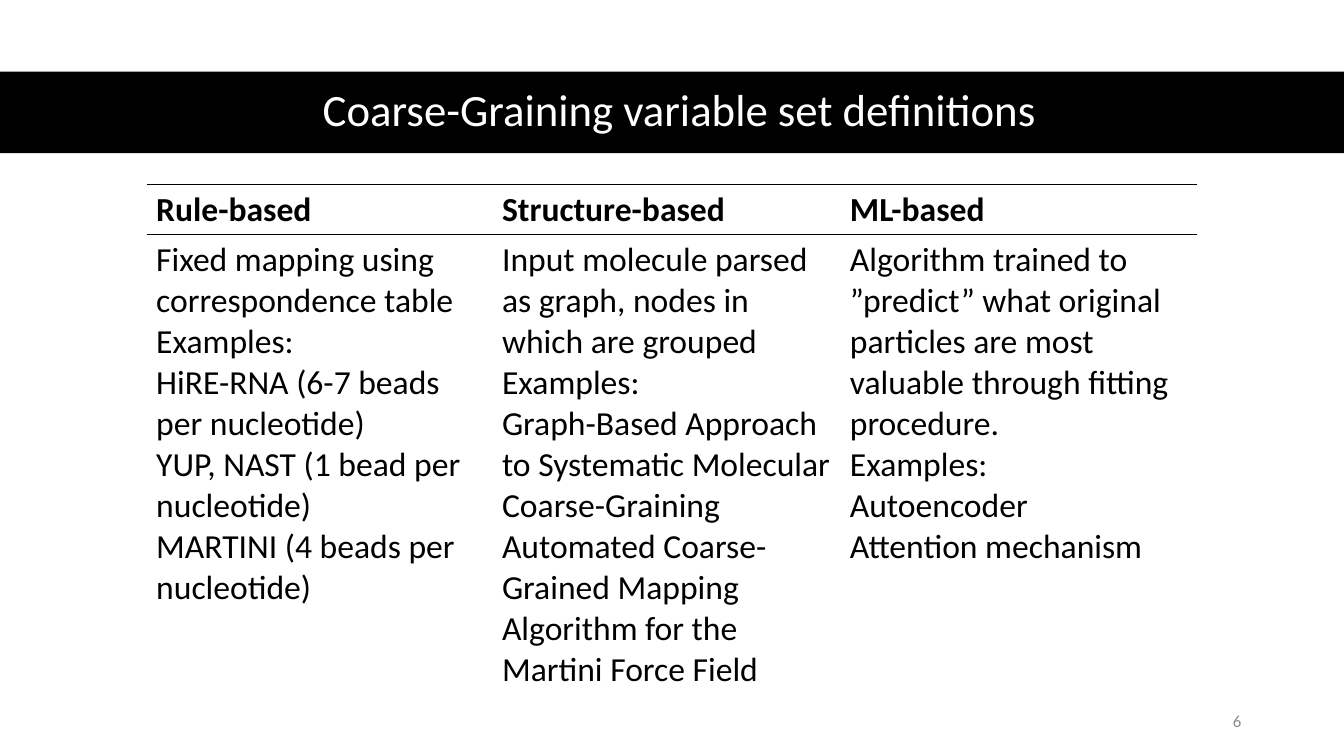
from dataclasses import dataclass
from lxml.etree import SubElement
from pptx import Presentation
from pptx.dml.color import RGBColor as Color
from pptx.enum.shapes import MSO_SHAPE as Shape
from pptx.enum.text import MSO_ANCHOR as Anchor, PP_ALIGN as Align
from pptx.oxml.ns import qn
from pptx.util import Inches, Pt


@dataclass(frozen=True)
class Theme:
    font: str = "Calibri"
    black: str = "000000"
    white: str = "FFFFFF"
    gray: str = "8C8C8C"
    title_size: int = 32
    body_size: int = 24
    number_size: int = 12
    spare_size: int = 5
    rule_width: int = 1


class PageBuilder:
    def __init__(self, page, theme):
        self.page = page
        self.theme = theme

    def style(self, para, size, color, bold=False):
        font = para.font
        font.name = self.theme.font
        font.size = Pt(size)
        font.bold = bold
        font.color.rgb = Color.from_string(color)

    def band(self, left, top, width, height):
        bar = self.page.shapes.add_shape(
            Shape.RECTANGLE, Inches(left), Inches(top), Inches(width), Inches(height))
        bar.shadow.inherit = False
        bar.fill.solid()
        bar.fill.fore_color.rgb = Color.from_string(self.theme.black)
        bar.line.fill.background()

    def text(self, left, top, width, height, words, size, color, align, spacing=1.0):
        box = self.page.shapes.add_textbox(
            Inches(left), Inches(top), Inches(width), Inches(height))
        frame = box.text_frame
        frame.word_wrap = True
        frame.vertical_anchor = Anchor.MIDDLE
        para = frame.paragraphs[0]
        para.text = words
        para.alignment = align
        para.line_spacing = spacing
        self.style(para, size, color)

    def borders(self, cell, ruled_sides):
        properties = cell._tc.get_or_add_tcPr()
        for side in ("lnL", "lnR", "lnT", "lnB"):
            line = SubElement(properties, qn(f"a:{side}"))
            if side in ruled_sides:
                line.set("w", str(Pt(self.theme.rule_width)))
                fill = SubElement(line, qn("a:solidFill"))
                SubElement(fill, qn("a:srgbClr")).set("val", self.theme.black)
            else:
                SubElement(line, qn("a:noFill"))

    def table(self, left, top, widths, heights, columns):
        table = self.page.shapes.add_table(
            len(heights), len(widths), Inches(left), Inches(top),
            Inches(sum(widths)), Inches(sum(heights))).table
        table.first_row = False
        table.horz_banding = False
        for row, height in zip(table.rows, heights):
            row.height = Inches(height)
        for index, (width, (heading, lines)) in enumerate(zip(widths, columns)):
            table.columns[index].width = Inches(width)
            self.cell(table.cell(0, index), [heading], ("lnT", "lnB"), bold=True)
            self.cell(table.cell(1, index), lines, ("lnT",))
            for spare in range(2, len(heights)):
                self.cell(table.cell(spare, index), [], ())

    def cell(self, cell, lines, ruled_sides, bold=False):
        self.borders(cell, ruled_sides)
        cell.fill.background()
        cell.margin_left = cell.margin_right = Inches(0.09)
        cell.margin_top = Inches(0.05)
        cell.margin_bottom = Inches(0.04)
        if not lines:
            ending = SubElement(cell.text_frame.paragraphs[0]._p, qn("a:endParaRPr"))
            ending.set("sz", str(self.theme.spare_size * 100))
            return
        cell.text = "\n".join(lines)
        for para in cell.text_frame.paragraphs:
            self.style(para, self.theme.body_size, self.theme.black, bold)


APPROACHES = [
    ("Rule-based", [
        "Fixed mapping using correspondence table",
        "Examples:",
        "HiRE-RNA (6-7 beads per nucleotide)",
        "YUP, NAST (1 bead per nucleotide)",
        "MARTINI (4 beads per nucleotide)",
    ]),
    ("Structure-based", [
        "Input molecule parsed as graph, nodes in which are grouped",
        "Examples:",
        "Graph-Based Approach to Systematic Molecular Coarse-Graining",
        "Automated Coarse-Grained Mapping Algorithm for the Martini Force Field",
    ]),
    ("ML-based", [
        "Algorithm trained to ”predict” what original particles are most "
        "valuable through fitting procedure.",
        "Examples:",
        "Autoencoder",
        "Attention mechanism",
    ]),
]


def main():
    deck = Presentation()
    deck.slide_width = Inches(13.33)
    deck.slide_height = Inches(7.5)
    theme = Theme()
    builder = PageBuilder(deck.slides.add_slide(deck.slide_layouts[6]), theme)
    builder.band(0, 0.71, 13.33, 0.81)
    builder.text(0.61, 0.71, 12.26, 0.81, "Coarse-Graining variable set definitions",
                 theme.title_size, theme.white, Align.CENTER, 0.9)
    builder.table(1.46, 1.83, [3.43, 3.45, 3.53], [0.5, 4.55] + [0.18] * 3, APPROACHES)
    builder.text(9.41, 6.95, 3, 0.4, "6", theme.number_size, theme.gray, Align.RIGHT)
    deck.save("out.pptx")


if __name__ == "__main__":
    main()
